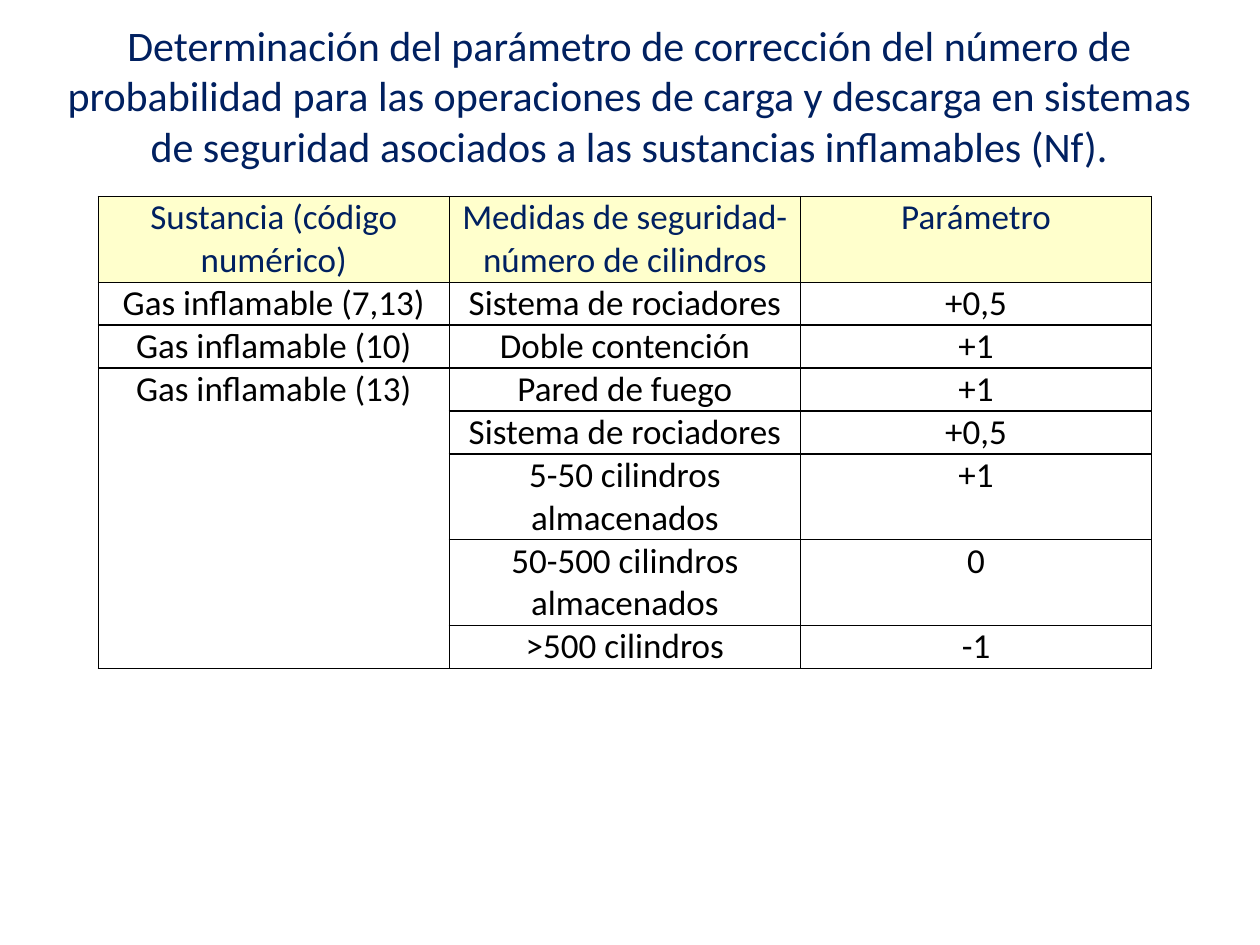
"""Builds a slide with a table of correction parameters for flammable substances."""
import pptx
import pptx.dml.color
import pptx.enum.text
import pptx.util
from lxml import etree

NS = "http://schemas.openxmlformats.org/drawingml/2006/main"
MID = pptx.enum.text.PP_ALIGN.CENTER
INK, NAVY, CREAM = "000000", "002060", "FFFFCC"


def tint(code):
    return pptx.dml.color.RGBColor.from_string(code)


def style(frame, size, code):
    for para in frame.paragraphs:
        para.alignment = MID
        para.font.name = "Calibri"
        para.font.size = pptx.util.Pt(size)
        para.font.color.rgb = tint(code)


deck = pptx.Presentation()
deck.slide_width = pptx.util.Inches(10)
deck.slide_height = pptx.util.Inches(7.5)
wide, unit = deck.slide_width, pptx.util.Inches(0.32)
slide = deck.slides.add_slide(deck.slide_layouts[5])

title = slide.shapes.title
title.left, title.top = int(wide * 0.023), pptx.util.Inches(0.13)
title.width, title.height = int(wide * 0.953), pptx.util.Inches(1.25)
title.text_frame.text = (
    "Determinación del parámetro de corrección del número de probabilidad "
    "para las operaciones de carga y descarga en sistemas de seguridad "
    "asociados a las sustancias inflamables (Nf)."
)
title.text_frame.vertical_anchor = pptx.enum.text.MSO_ANCHOR.MIDDLE
style(title.text_frame, 24, NAVY)

rows = [
    (2, "Sustancia (código numérico)", "Medidas de seguridad-número de cilindros", "Parámetro"),
    (1, "Gas inflamable (7,13)", "Sistema de rociadores", "+0,5"),
    (1, "Gas inflamable (10)", "Doble contención", "+1"),
    (1, "Gas inflamable (13)", "Pared de fuego", "+1"),
    (1, "", "Sistema de rociadores", "+0,5"),
    (2, "", "5-50 cilindros almacenados", "+1"),
    (2, "", "50-500 cilindros almacenados", "0"),
    (1, "", ">500 cilindros", "-1"),
]
lines = sum(row[0] for row in rows)
grid = slide.shapes.add_table(
    len(rows), 3, int(wide * 0.078), pptx.util.Inches(1.56), int(wide * 0.836), unit * lines
).table

for r, (tall, *texts) in enumerate(rows):
    grid.rows[r].height = unit * tall
    for c, text in enumerate(texts):
        cell = grid.cell(r, c)
        cell.text = text
        cell.margin_left = cell.margin_right = pptx.util.Inches(0.07)
        cell.margin_top = cell.margin_bottom = 0
        style(cell.text_frame, 20, INK if r else NAVY)
        props = cell._tc.get_or_add_tcPr()
        for side in "LRTB":
            edge = etree.SubElement(props, f"{{{NS}}}ln{side}", w=str(pptx.util.Pt(1)))
            fill = etree.SubElement(edge, f"{{{NS}}}solidFill")
            etree.SubElement(fill, f"{{{NS}}}srgbClr", val=INK)
        if r:
            cell.fill.background()
        else:
            cell.fill.solid()
            cell.fill.fore_color.rgb = tint(CREAM)
            for para in cell.text_frame.paragraphs:
                para.font.bold = False

grid.cell(3, 0).merge(grid.cell(7, 0))
deck.save("out.pptx")
